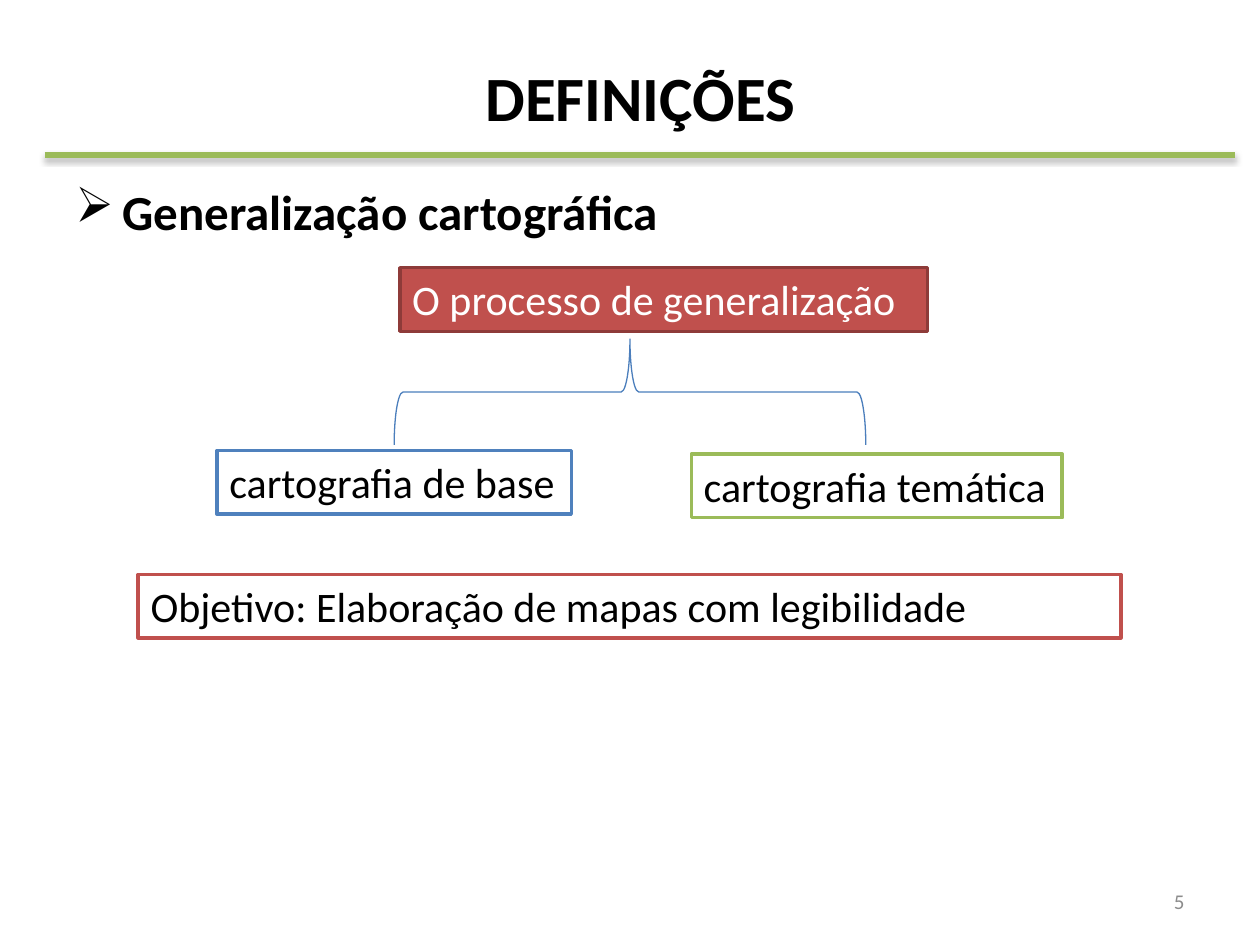
from lxml.etree import SubElement
from pptx import Presentation
from pptx.dml.color import RGBColor
from pptx.enum.shapes import MSO_CONNECTOR, MSO_SHAPE
from pptx.enum.text import MSO_ANCHOR, MSO_AUTO_SIZE, PP_ALIGN
from pptx.oxml.ns import qn
from pptx.util import Pt

COLORS = {
    "black": "000000", "white": "FFFFFF", "gray": "8C8C8C",
    "red": "C0504D", "dark red": "8E3B39", "green": "9BBB59",
    "blue": "4F81BD", "brace": "4B7EBC",
}
BOX_HEIGHT = 36.35


def color(name):
    return RGBColor.from_string(COLORS[name])


class SlideBuilder:
    def __init__(self, page, font_name="Calibri"):
        self.page = page
        self.font_name = font_name

    def fill_text(self, shape, text, size, ink="black", bold=False,
                  align=PP_ALIGN.LEFT, **frame_format):
        frame = shape.text_frame
        for name, value in frame_format.items():
            setattr(frame, name, value)
        para = frame.paragraphs[0]
        para.alignment = align
        span = para.add_run()
        span.text = text
        font_format = {"name": self.font_name, "size": Pt(size), "bold": bold}
        for name, value in font_format.items():
            setattr(span.font, name, value)
        span.font.color.rgb = color(ink)
        return para

    def text(self, place, text, size, **style):
        box = self.page.shapes.add_textbox(*map(Pt, place))
        return self.fill_text(box, text, size, word_wrap=True, **style)

    def bullet(self, place, text, size, symbol, indent):
        para = self.text(place, text, size, bold=True, align=PP_ALIGN.JUSTIFY)
        para.space_before = Pt(size * 0.2)
        properties = para._p.get_or_add_pPr()
        properties.set("marL", str(Pt(indent)))
        properties.set("indent", str(-Pt(indent)))
        SubElement(properties, qn("a:buChar"), char=symbol)

    def shape(self, kind, place, line, width):
        shape = self.page.shapes.add_shape(kind, *map(Pt, place))
        shape.shadow.inherit = False
        shape.line.color.rgb = color(line)
        shape.line.width = Pt(width)
        return shape

    def label(self, left, top, width, text, line, fill="white", ink="black", wrap=True):
        box = self.shape(MSO_SHAPE.RECTANGLE, (left, top, width, BOX_HEIGHT), line, 2)
        box.fill.solid()
        box.fill.fore_color.rgb = color(fill)
        self.fill_text(box, text, 24, ink, word_wrap=wrap,
                       auto_size=MSO_AUTO_SIZE.SHAPE_TO_FIT_TEXT,
                       vertical_anchor=MSO_ANCHOR.TOP)

    def brace(self, place, line):
        brace = self.shape(MSO_SHAPE.RIGHT_BRACE, place, line, 0.75)
        brace.fill.background()
        brace.rotation = 270

    def rule(self, left, right, top, line):
        rule = self.page.shapes.add_connector(
            MSO_CONNECTOR.STRAIGHT, Pt(left), Pt(top), Pt(right), Pt(top))
        rule.line.color.rgb = color(line)
        rule.line.width = Pt(3)
        # Soft shadow straight below the rule
        effects = SubElement(rule._element.spPr, qn("a:effectLst"))
        shadow = SubElement(effects, qn("a:outerShdw"), blurRad=str(Pt(3.1)),
                            dist=str(Pt(1.8)), dir="5400000", rotWithShape="0")
        shade = SubElement(shadow, qn("a:srgbClr"), val=COLORS["black"])
        SubElement(shade, qn("a:alpha"), val="35000")


def main():
    deck = Presentation()
    deck.slide_width, deck.slide_height = Pt(720), Pt(540)
    slide = SlideBuilder(deck.slides.add_slide(deck.slide_layouts[6]))

    # Title, heading and page number
    slide.text((42, 10, 648, 90), "DEFINIÇÕES", 36, bold=True,
               align=PP_ALIGN.CENTER, vertical_anchor=MSO_ANCHOR.MIDDLE)
    slide.bullet((36, 100, 648, 400), "Generalização cartográfica", 28, "➢", 27)
    slide.text((516, 500.5, 168, 28.75), "5", 12, ink="gray",
               align=PP_ALIGN.RIGHT, vertical_anchor=MSO_ANCHOR.MIDDLE)
    slide.rule(25.5, 705.5, 88.5, "green")

    # Process and its two branches
    slide.label(228.5, 153, 301.5, "O processo de generalização", "dark red", "red", "white")
    slide.label(124, 257.5, 202.5, "cartografia de base", "blue", wrap=False)
    slide.label(395, 259.5, 212, "cartografia temática", "green", wrap=False)
    slide.brace((329.75, 89.25, 60.5, 269.5), "brace")

    # Goal
    slide.label(79, 328.25, 561.5, "Objetivo: Elaboração de mapas com legibilidade", "red")

    deck.save("out.pptx")


if __name__ == "__main__":
    main()
